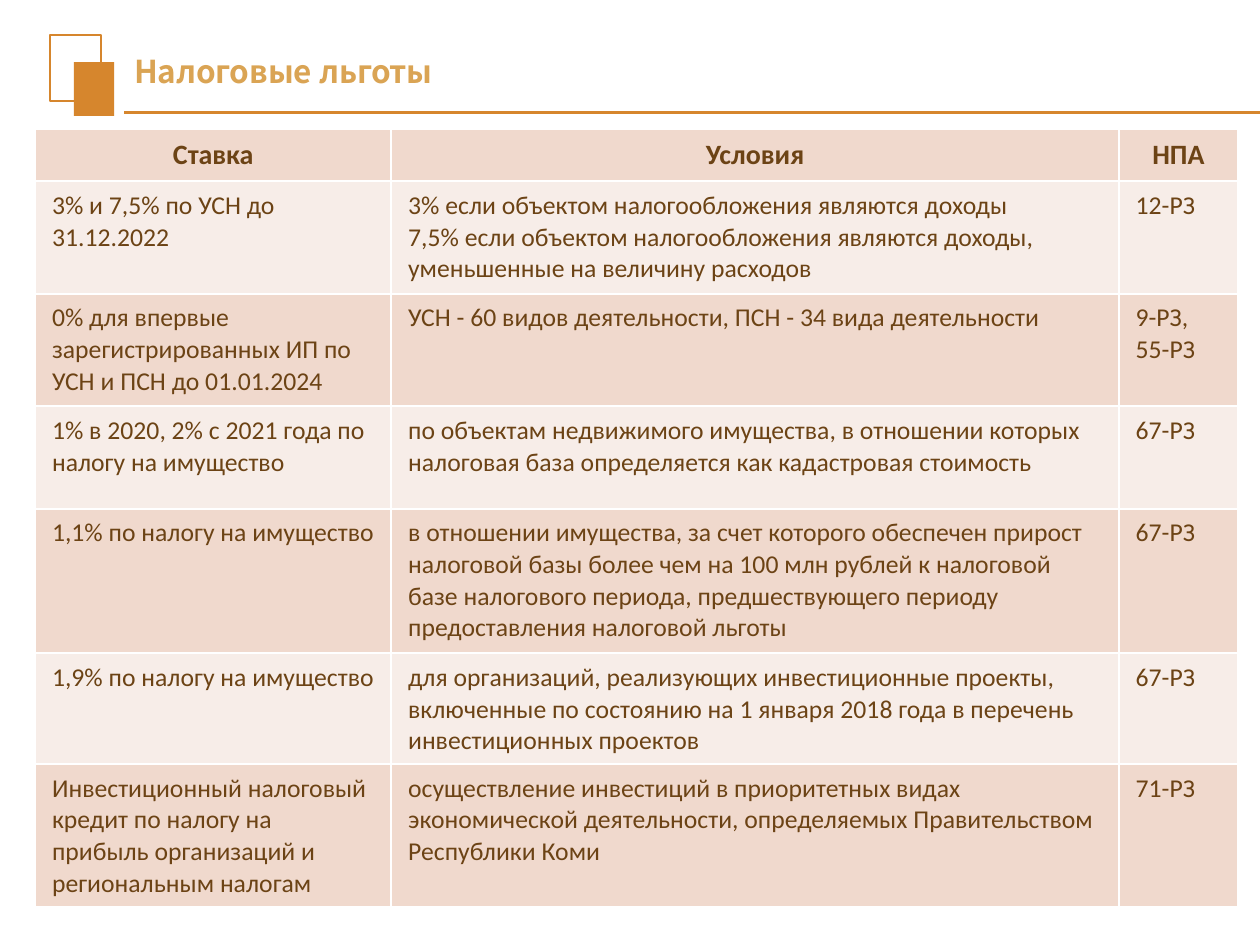
"""Build the slide on tax benefits: a title mark, a rule and a table of rates."""
from dataclasses import dataclass

from lxml import etree
from pptx import Presentation
from pptx.dml.color import RGBColor
from pptx.enum.shapes import MSO_CONNECTOR, MSO_SHAPE
from pptx.enum.text import MSO_ANCHOR, PP_ALIGN
from pptx.oxml.ns import qn
from pptx.util import Inches, Pt

RECTANGLE = MSO_SHAPE.RECTANGLE
STRAIGHT = MSO_CONNECTOR.STRAIGHT
MIDDLE = MSO_ANCHOR.MIDDLE
CENTER, LEFT = PP_ALIGN.CENTER, PP_ALIGN.LEFT

SLIDE_WIDTH = Inches(7.5)
SLIDE_HEIGHT = SLIDE_WIDTH * 3 // 4
GRID_COLUMNS = 750
GRID_ROWS = GRID_COLUMNS * 3 / 4

ORANGE, GOLD, BROWN, WHITE = "D6862D", "DAA454", "6C4315", "FFFFFF"
BAND_FILLS = ("F0D9CD", "F7EDE8")

TITLE_FORMAT = {"name": "Noto Sans CJK SC", "size": Pt(13.5), "bold": True}
HEADER_FORMAT = {"name": "Calibri", "size": Pt(12), "bold": True}
BODY_FORMAT = {"name": "Calibri", "size": Pt(11), "bold": False}
CELL_MARGINS = {
    "margin_left": Inches(0.1),
    "margin_right": Inches(0.1),
    "margin_top": Inches(0.05),
    "margin_bottom": Inches(0.05),
}


@dataclass(frozen=True)
class Square:
    """One rectangle of the title mark, in grid units."""
    left: int
    top: int
    width: int
    height: int
    filled: bool


@dataclass(frozen=True)
class Benefit:
    """One table row with its height in grid rows."""
    height: int
    rate: str
    conditions: str
    law: str


MARK = (
    Square(30, 21, 30, 39, False),
    Square(44, 37, 24, 32, True),
)
TABLE_LEFT, TABLE_TOP = 21, 77
COLUMN_WIDTHS = (212, 433, 71)
BENEFITS = (
    Benefit(31, "Ставка", "Условия", "НПА"),
    Benefit(67, "3% и 7,5% по УСН до 31.12.2022",
            "3% если объектом налогообложения являются доходы\n"
            "7,5% если объектом налогообложения являются доходы, "
            "уменьшенные на величину расходов", "12-РЗ"),
    Benefit(67, "0% для впервые зарегистрированных ИП по УСН и ПСН до 01.01.2024",
            "УСН - 60 видов деятельности, ПСН - 34 вида деятельности",
            "9-РЗ, 55-РЗ"),
    Benefit(61, "1% в 2020, 2% с 2021 года по налогу на имущество",
            "по объектам недвижимого имущества, в отношении которых "
            "налоговая база определяется как кадастровая стоимость", "67-РЗ"),
    Benefit(86, "1,1% по налогу на имущество",
            "в отношении имущества, за счет которого обеспечен прирост "
            "налоговой базы более чем на 100 млн рублей к налоговой базе "
            "налогового периода, предшествующего периоду предоставления "
            "налоговой льготы", "67-РЗ"),
    Benefit(66, "1,9% по налогу на имущество",
            "для организаций, реализующих инвестиционные проекты, включенные "
            "по состоянию на 1 января 2018 года в перечень инвестиционных "
            "проектов", "67-РЗ"),
    Benefit(85, "Инвестиционный налоговый кредит по налогу на прибыль "
            "организаций и региональным налогам",
            "осуществление инвестиций в приоритетных видах экономической "
            "деятельности, определяемых Правительством Республики Коми",
            "71-РЗ"),
)


def across(columns: int) -> int:
    """Return the width of a number of grid columns."""
    return round(SLIDE_WIDTH * columns / GRID_COLUMNS)


def down(rows: int) -> int:
    """Return the height of a number of grid rows."""
    return round(SLIDE_HEIGHT * rows / GRID_ROWS)


def color(hex_value: str) -> RGBColor:
    """Turn a hex string into a colour."""
    return RGBColor.from_string(hex_value)


def apply(target, values: dict) -> None:
    """Set every attribute named in a dict of format values."""
    for attribute, value in values.items():
        setattr(target, attribute, value)


def write(frame, text: str, font_format: dict, hex_value: str, alignment) -> None:
    """Write text into a frame and format each of its paragraphs."""
    frame.text = text
    for paragraph in frame.paragraphs:
        paragraph.alignment = alignment
        for run in paragraph.runs:
            apply(run.font, font_format)
            run.font.color.rgb = color(hex_value)


def draw_square(slide, square: Square) -> None:
    """Draw one rectangle of the title mark."""
    mark = slide.shapes.add_shape(RECTANGLE, across(square.left), down(square.top),
                                  across(square.width), down(square.height))
    mark.shadow.inherit = False
    if square.filled:
        mark.fill.solid()
        mark.fill.fore_color.rgb = color(ORANGE)
        mark.line.fill.background()
    else:
        mark.fill.background()
        mark.line.color.rgb = color(ORANGE)
        mark.line.width = Pt(0.75)


def draw_rule(slide) -> None:
    """Draw the rule under the title up to the slide's right edge."""
    rule = slide.shapes.add_connector(STRAIGHT, across(74), down(67),
                                      SLIDE_WIDTH, down(67))
    rule.line.color.rgb = color(ORANGE)
    rule.line.width = Pt(1.25)
    etree.SubElement(rule._element.spPr, qn("a:effectLst"))


def draw_title(slide) -> None:
    """Write the slide's title."""
    title = slide.shapes.add_textbox(across(70), down(21), across(332), down(43))
    apply(title.text_frame, {"word_wrap": True, "vertical_anchor": MIDDLE})
    write(title.text_frame, "Налоговые льготы", TITLE_FORMAT, GOLD, LEFT)


def add_borders(cell) -> None:
    """Give a cell thin white borders on all sides."""
    properties = cell._tc.get_or_add_tcPr()
    for position, side in enumerate(("lnL", "lnR", "lnT", "lnB")):
        border = etree.Element(qn(f"a:{side}"), w=str(Pt(1)))
        fill = etree.SubElement(border, qn("a:solidFill"))
        etree.SubElement(fill, qn("a:srgbClr"), val=WHITE)
        properties.insert(position, border)


def draw_benefits(slide) -> None:
    """Draw the table of rates, conditions and laws."""
    total_height = sum(benefit.height for benefit in BENEFITS)
    table = slide.shapes.add_table(
        len(BENEFITS), len(COLUMN_WIDTHS), across(TABLE_LEFT), down(TABLE_TOP),
        across(sum(COLUMN_WIDTHS)), down(total_height)).table
    apply(table, {"first_row": False, "horz_banding": False})
    for column, width in zip(table.columns, COLUMN_WIDTHS):
        column.width = across(width)
    for index, benefit in enumerate(BENEFITS):
        table.rows[index].height = down(benefit.height)
        font_format, alignment = (BODY_FORMAT, LEFT) if index else (HEADER_FORMAT, CENTER)
        texts = (benefit.rate, benefit.conditions, benefit.law)
        for cell, text in zip(table.rows[index].cells, texts):
            apply(cell, CELL_MARGINS)
            cell.fill.solid()
            cell.fill.fore_color.rgb = color(BAND_FILLS[index % 2])
            add_borders(cell)
            write(cell.text_frame, text, font_format, BROWN, alignment)


def main() -> None:
    """Build the slide and save it."""
    deck = Presentation()
    apply(deck, {"slide_width": SLIDE_WIDTH, "slide_height": SLIDE_HEIGHT})
    slide = deck.slides.add_slide(deck.slide_layouts[6])
    for square in MARK:
        draw_square(slide, square)
    draw_rule(slide)
    draw_title(slide)
    draw_benefits(slide)
    deck.save("out.pptx")


if __name__ == "__main__":
    main()
